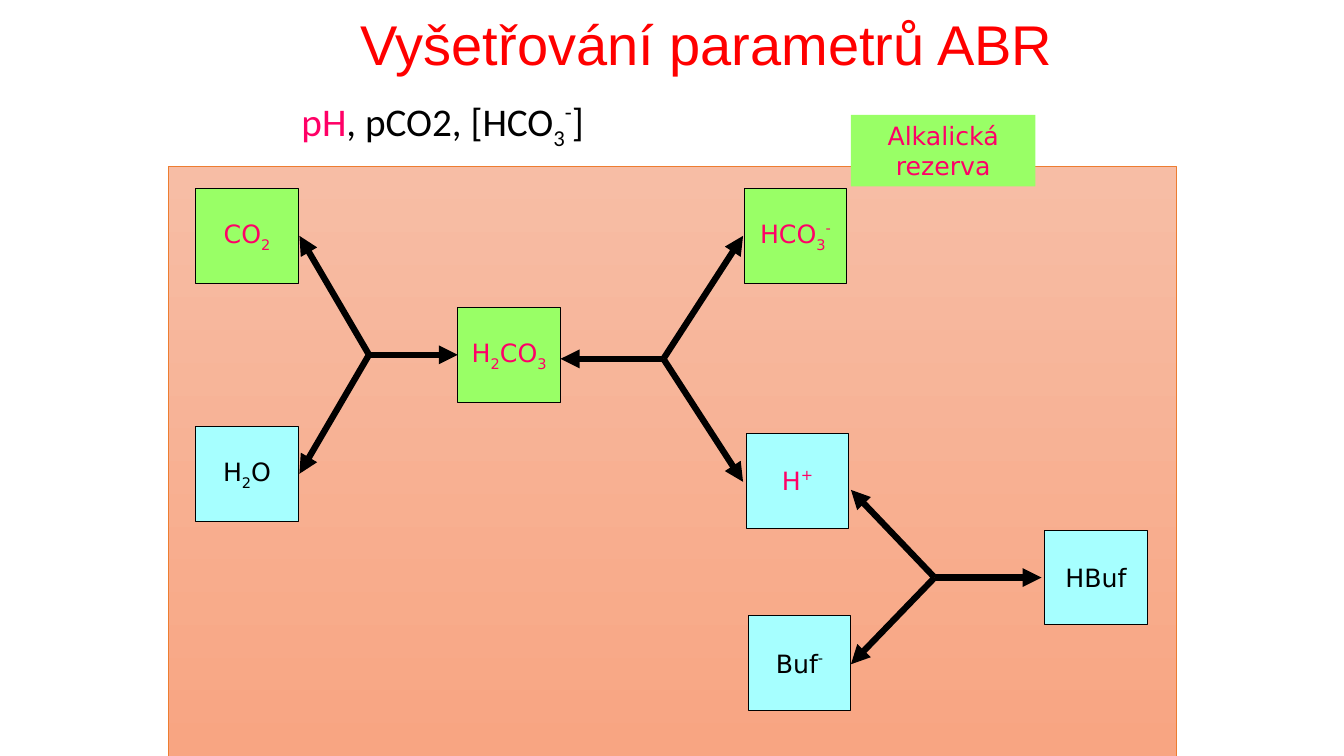
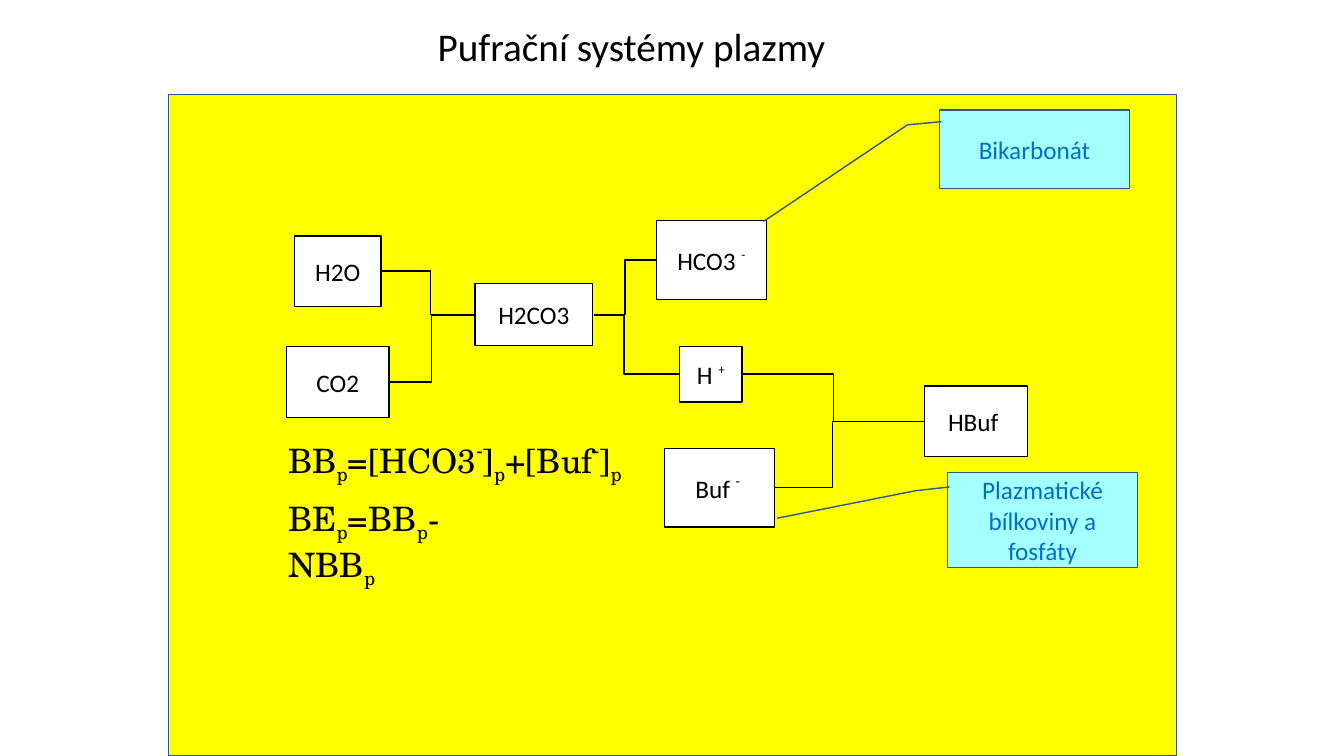
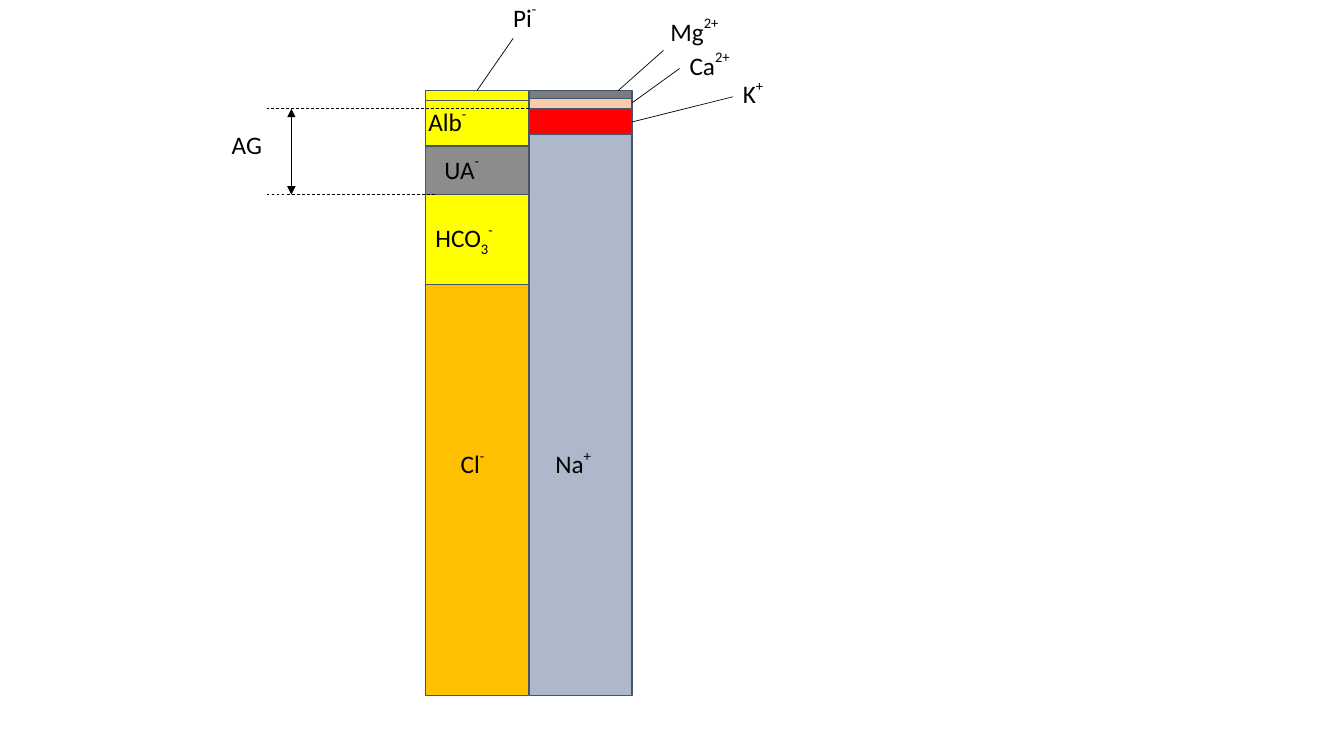
from dataclasses import dataclass, replace
from itertools import pairwise
from typing import NamedTuple

import lxml.etree
import pptx
import pptx.dml.color
import pptx.enum.dml
import pptx.enum.shapes
import pptx.enum.text
import pptx.oxml.ns
import pptx.shapes.autoshape
import pptx.shapes.connector
import pptx.slide
import pptx.text.text
import pptx.util
from pptx.util import Inches

BLACK, WHITE, RED, PINK = "000000", "FFFFFF", "FF0000", "FF0066"
GREEN, CYAN, YELLOW = "99FF66", "A6FFFF", "FFFF00"
NAVY, BLUE, SLATE, ORANGE = "325491", "0070C0", "44546A", "ED7D31"

ALIGN = pptx.enum.text.PP_ALIGN
ANCHOR = pptx.enum.text.MSO_ANCHOR
PRESET = pptx.enum.shapes.MSO_SHAPE
CONNECTOR = pptx.enum.shapes.MSO_CONNECTOR

TITLE_ONLY, TITLE_AND_BODY, BLANK = 5, 1, 6


class Area(NamedTuple):
    left: float
    top: float
    width: float
    height: float


class Point(NamedTuple):
    x: float
    y: float


@dataclass(frozen=True)
class TextStyle:
    font: str = "Calibri"
    size: float = 18
    colour: str = BLACK
    align: ALIGN = ALIGN.CENTER
    superscript: int = 50
    superscript_size: float | None = None
    line_spacing: float = 1.0


@dataclass(frozen=True)
class Box:
    area: Area
    text: str
    fill: str
    style: TextStyle


@dataclass(frozen=True)
class Hub:
    """A junction with an arrow to each tip."""
    centre: Point
    tips: tuple[Point, ...]


@dataclass(frozen=True)
class Elbow:
    left: Point
    right: Point
    bend: float


@dataclass(frozen=True)
class Callout:
    area: Area
    text: str
    adjustments: tuple[float, ...]


@dataclass(frozen=True)
class Stack:
    """A column of layers, each reaching down to the top of the next."""
    left: float
    tops: tuple[float, ...]
    fills: tuple[str, ...]


MOLECULE = TextStyle(font="DejaVu Sans", superscript=40)
PINK_MOLECULE = replace(MOLECULE, colour=PINK)
PLASMA = TextStyle(superscript=46)
PLASMA_ION = replace(PLASMA, superscript_size=16)
EQUATION = TextStyle("TeX Gyre Schola", 24, align=ALIGN.LEFT, superscript=46)
ION_LABEL = TextStyle(align=ALIGN.LEFT)
HEADING = TextStyle(size=28, align=ALIGN.LEFT, superscript=40, line_spacing=0.9)


def rgb(code: str) -> pptx.dml.color.RGBColor:
    return pptx.dml.color.RGBColor.from_string(code)


def write(frame: pptx.text.text.TextFrame, text: str, style: TextStyle) -> None:
    """Fill the frame; "|" separates runs, "_" lowers a run and "^" raises it."""
    frame.word_wrap = True
    frame.auto_size = pptx.enum.text.MSO_AUTO_SIZE.NONE
    para = frame.paragraphs[0]
    para.alignment = style.align
    para.line_spacing = style.line_spacing
    para.space_before = pptx.util.Pt(0)
    para.font.name = style.font
    para.font.size = pptx.util.Pt(style.size)
    para.font.color.rgb = rgb(style.colour)
    shifts = {"_": -25, "^": style.superscript}
    for piece in text.split("|"):
        span = para.add_run()
        shift = shifts.get(piece[0])
        span.text = piece[1:] if shift else piece
        if shift:
            span._r.get_or_add_rPr().set("baseline", str(shift * 1000))
        if piece[0] == "^" and style.superscript_size:
            span.font.size = pptx.util.Pt(style.superscript_size)


def place(shape: pptx.shapes.autoshape.Shape, area: Area) -> None:
    shape.left, shape.top, shape.width, shape.height = map(Inches, area)


def add_box(page: pptx.slide.Slide, area: Area, fill: str, line: str | None = None,
            width: float = 1, preset: PRESET = PRESET.RECTANGLE) -> pptx.shapes.autoshape.Shape:
    shape = page.shapes.add_shape(preset, *map(Inches, area))
    shape.shadow.inherit = False
    shape.fill.solid()
    shape.fill.fore_color.rgb = rgb(fill)
    if line:
        shape.line.color.rgb = rgb(line)
        shape.line.width = pptx.util.Pt(width)
    else:
        shape.line.fill.background()
    return shape


def add_text_box(page: pptx.slide.Slide, box: Box, line: str | None = None, width: float = 1) -> None:
    write(add_box(page, box.area, box.fill, line, width).text_frame, box.text, box.style)


def add_label(page: pptx.slide.Slide, area: Area, text: str, style: TextStyle) -> None:
    write(page.shapes.add_textbox(*map(Inches, area)).text_frame, text, style)


def add_title(page: pptx.slide.Slide, area: Area, text: str, style: TextStyle) -> None:
    title = page.shapes.title
    place(title, area)
    title.text_frame.vertical_anchor = ANCHOR.MIDDLE
    write(title.text_frame, text, style)


def add_line(page: pptx.slide.Slide, start: Point, end: Point, width: float, ends: tuple[str, ...] = (),
             dashed: bool = False, kind: CONNECTOR = CONNECTOR.STRAIGHT) -> pptx.shapes.connector.Connector:
    """Draw a black line; ends may name "headEnd" (start) and "tailEnd" (end) arrowheads."""
    line = page.shapes.add_connector(kind, *map(Inches, (*start, *end)))
    line.line.color.rgb = rgb(BLACK)
    line.line.width = pptx.util.Pt(width)
    if dashed:
        line.line.dash_style = pptx.enum.dml.MSO_LINE.DASH
    for name in ends:
        lxml.etree.SubElement(line.get_or_add_ln(), pptx.oxml.ns.qn(f"a:{name}"), type="triangle")
    lxml.etree.SubElement(line.element.spPr, pptx.oxml.ns.qn("a:effectLst"))
    return line


def add_elbow(page: pptx.slide.Slide, elbow: Elbow) -> None:
    line = add_line(page, elbow.left, elbow.right, 1, kind=CONNECTOR.ELBOW)
    share = (elbow.bend - elbow.left.x) / (elbow.right.x - elbow.left.x)
    geometry = line.element.spPr.find(pptx.oxml.ns.qn("a:prstGeom"))
    guides = geometry.find(pptx.oxml.ns.qn("a:avLst"))
    if guides is None:
        guides = lxml.etree.SubElement(geometry, pptx.oxml.ns.qn("a:avLst"))
    lxml.etree.SubElement(guides, pptx.oxml.ns.qn("a:gd"), name="adj1", fmla=f"val {round(share * 100000)}")


def build_parameters(page: pptx.slide.Slide) -> None:
    add_title(page, Area(1.67, -0.16, 10.67, 1.25), "Vyšetřování parametrů ABR",
              replace(HEADING, font="Arial", size=40, colour=RED, align=ALIGN.CENTER))

    body = page.placeholders[1]
    place(body, Area(2.89, 0.92, 9, 0.71))
    para = body.text_frame.paragraphs[0]
    properties = para._p.get_or_add_pPr()
    properties.set("marL", str(Inches(0.25)))
    properties.set("indent", str(Inches(-0.25)))
    lxml.etree.SubElement(properties, pptx.oxml.ns.qn("a:buNone"))
    write(body.text_frame, "pH|, pCO2, [HCO|_3|^-|]", HEADING)
    para.runs[0].font.color.rgb = rgb(PINK)

    panel = add_box(page, Area(1.67, 1.65, 10, 5.85), WHITE, ORANGE, 0.5)
    panel.fill.gradient()
    panel.fill.gradient_angle = 270
    for stop, code in zip(panel.fill.gradient_stops, ("F7BDA5", "F8A582")):
        stop.color.rgb = rgb(code)

    hubs = (
        Hub(Point(6.58, 3.56), (Point(7.37, 4.78), Point(7.37, 2.34), Point(5.56, 3.56))),
        Hub(Point(3.66, 3.52), (Point(2.97, 4.7), Point(2.97, 2.34), Point(4.54, 3.52))),
        Hub(Point(9.27, 5.73), (Point(8.44, 6.59), Point(8.44, 4.86), Point(10.33, 5.73))),
    )
    for hub in hubs:
        for tip in hub.tips:
            add_line(page, hub.centre, tip, 4.5, ("tailEnd",))

    size = (1.02, 0.94)
    molecules = (
        Box(Area(7.38, 1.87, *size), "HCO|_3|^-", GREEN, PINK_MOLECULE),
        Box(Area(7.4, 4.3, *size), "H|^+", CYAN, PINK_MOLECULE),
        Box(Area(7.42, 6.11, *size), "Buf|^-", CYAN, MOLECULE),
        Box(Area(10.36, 5.26, *size), "HBuf", CYAN, MOLECULE),
        Box(Area(1.94, 1.87, *size), "CO|_2", GREEN, PINK_MOLECULE),
        Box(Area(1.94, 4.23, *size), "H|_2|O", CYAN, MOLECULE),
        Box(Area(4.54, 3.05, *size), "H|_2|CO|_3", GREEN, PINK_MOLECULE),
    )
    for molecule in molecules:
        add_text_box(page, molecule, BLACK, 0.75)
    add_text_box(page, Box(Area(8.44, 1.14, 1.83, 0.71), "Alkalická rezerva", GREEN, PINK_MOLECULE))


def build_buffers(page: pptx.slide.Slide) -> None:
    add_title(page, Area(4.24, 0.16, 7.03, 0.64), "Pufrační systémy plazmy", HEADING)
    add_box(page, Area(1.67, 0.94, 10, 6.56), YELLOW, NAVY)

    molecules = (
        Box(Area(2.84, 3.44, 1.02, 0.7), "CO2", WHITE, PLASMA),
        Box(Area(2.92, 2.34, 0.86, 0.7), "H2O", WHITE, PLASMA),
        Box(Area(4.71, 2.81, 1.17, 0.62), "H2CO3", WHITE, PLASMA),
        Box(Area(6.51, 2.19, 1.09, 0.78), "HCO3 |^-", WHITE, PLASMA_ION),
        Box(Area(6.74, 3.44, 0.62, 0.55), "H |^+", WHITE, PLASMA_ION),
        Box(Area(9.17, 3.83, 1.02, 0.7), "HBuf ", WHITE, PLASMA),
        Box(Area(6.59, 4.45, 1.09, 0.78), "Buf |^- ", WHITE, PLASMA),
    )
    for molecule in molecules:
        add_text_box(page, molecule, BLACK)

    elbows = (
        Elbow(Point(7.37, 3.71), Point(9.17, 4.18), 8.27),
        Elbow(Point(7.68, 4.84), Point(9.17, 4.18), 8.26),
        Elbow(Point(3.78, 2.69), Point(4.71, 3.12), 4.27),
        Elbow(Point(3.85, 3.79), Point(4.71, 3.13), 4.28),
        Elbow(Point(5.89, 3.12), Point(6.51, 2.58), 6.2),
        Elbow(Point(5.89, 3.13), Point(6.74, 3.71), 6.19),
    )
    for elbow in elbows:
        add_elbow(page, elbow)

    add_label(page, Area(2.76, 4.3, 3.58, 0.51), "BB|_p|=[HCO3|^-|]|_p|+[Buf|^-|]|_p", EQUATION)
    add_label(page, Area(2.76, 4.89, 2.51, 0.51), "BE|_p|=BB|_p|-NBB|_p", EQUATION)

    callouts = (
        Callout(Area(9.32, 1.09, 1.88, 0.78), "Bikarbonát", (0.15, 0.01, 0.19, -0.17, 1.42, -0.93)),
        Callout(Area(9.4, 4.69, 1.88, 0.94), "Plazmatické bílkoviny a fosfáty",
                (0.15, 0.01, 0.19, -0.17, 0.48, -0.9)),
    )
    for callout in callouts:
        shape = add_box(page, callout.area, CYAN, NAVY, preset=PRESET.LINE_CALLOUT_2)
        for index, value in enumerate(callout.adjustments):
            shape.adjustments[index] = value
        write(shape.text_frame, callout.text, replace(PLASMA, colour=BLUE))


def build_ionogram(page: pptx.slide.Slide) -> None:
    stacks = (
        Stack(5.25, (0.9, 0.98, 1.08, 1.33, 6.9), ("7C7C7C", "F8CBAD", RED, "ADB9CA")),
        Stack(4.22, (0.9, 1, 1.45, 1.93, 2.82, 6.9), (YELLOW, YELLOW, "8C8C8C", YELLOW, "FFC000")),
    )
    for stack in stacks:
        for (top, bottom), fill in zip(pairwise(stack.tops), stack.fills):
            add_box(page, Area(stack.left, top, 1.02, bottom - top), fill, SLATE)

    labels = (
        (4.99, -0.05, 0.56, "Pi|^-"),
        (6.55, 0.09, 0.91, "Mg|^2+"),
        (6.74, 0.43, 0.81, "Ca|^2+"),
        (7.27, 0.71, 0.57, "K|^+"),
        (5.41, 4.38, 0.72, "Na|^+"),
        (4.47, 4.38, 0.59, "Cl|^-"),
        (4.31, 1.46, 0.76, "UA|^-"),
        (4.22, 2.14, 1.1, "HCO|_3|^-"),
        (4.15, 0.99, 0.78, "Alb|^-"),
        (2.2, 1.23, 0.69, "AG"),
    )
    for left, top, width, text in labels:
        add_label(page, Area(left, top, width, 0.5), text, ION_LABEL)

    leaders = (
        (Point(6.58, 0.5), Point(6.13, 0.9)),
        (Point(6.74, 0.68), Point(6.27, 1.02)),
        (Point(7.27, 0.96), Point(6.27, 1.21)),
        (Point(4.73, 0.9), Point(5.09, 0.38)),
    )
    for start, end in leaders:
        add_line(page, start, end, 0.5)

    gap_top, gap_bottom = 1.08, 1.93
    for right, level in ((4.31, gap_bottom), (5.25, gap_top)):
        add_line(page, Point(right, level), Point(2.65, level), 0.5, dashed=True)
    add_line(page, Point(2.89, gap_top), Point(2.89, gap_bottom), 0.5, ("headEnd", "tailEnd"))


def main() -> None:
    deck = pptx.Presentation()
    deck.slide_width, deck.slide_height = Inches(13.33), Inches(7.5)
    pages = ((TITLE_AND_BODY, build_parameters), (TITLE_ONLY, build_buffers), (BLANK, build_ionogram))
    for layout, build in pages:
        build(deck.slides.add_slide(deck.slide_layouts[layout]))
    deck.save("out.pptx")


if __name__ == "__main__":
    main()
